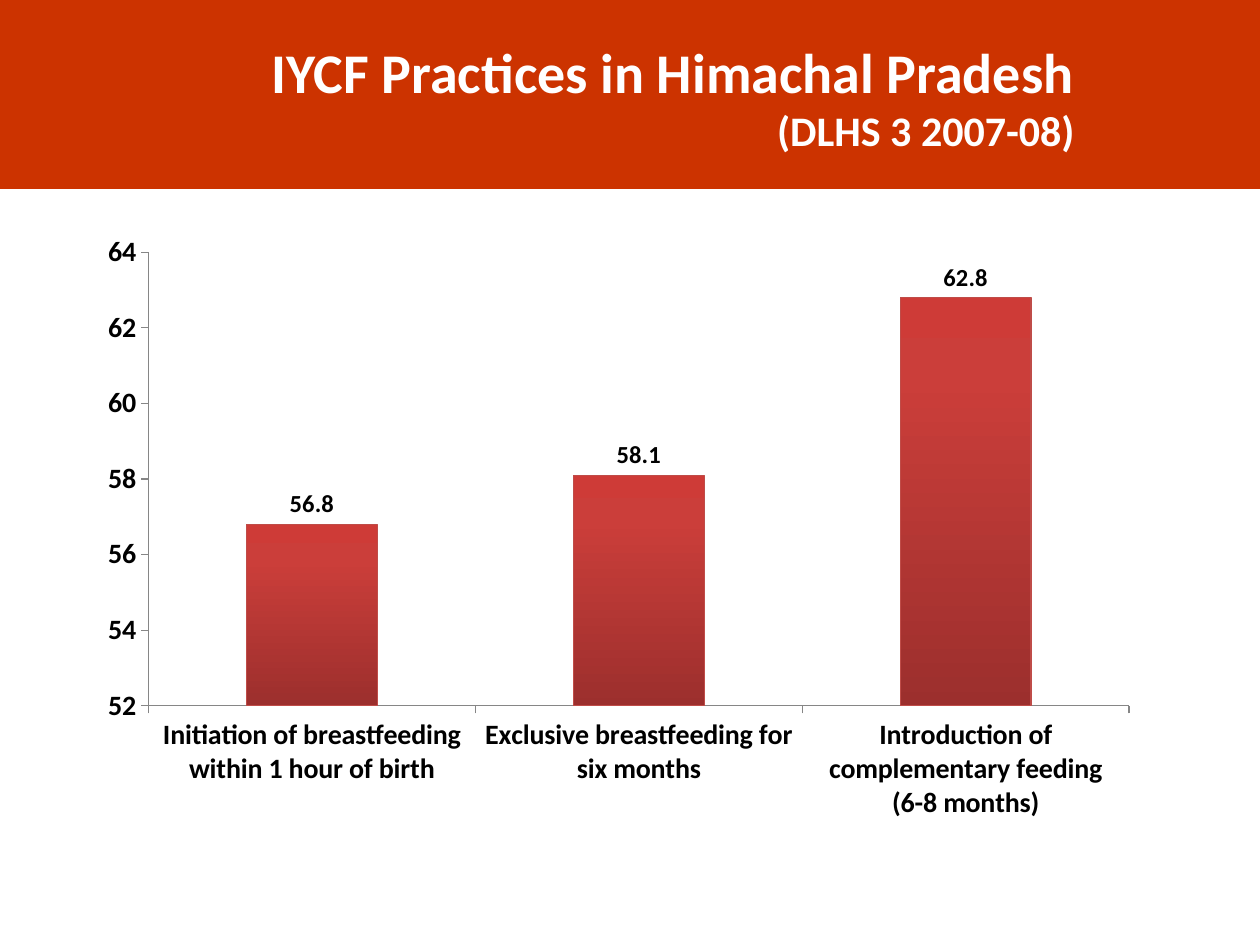
from copy import deepcopy
from dataclasses import dataclass

from pptx import Presentation
from pptx.chart.data import CategoryChartData
from pptx.dml.color import RGBColor as RGB
from pptx.enum.chart import XL_CHART_TYPE as ChartType
from pptx.enum.chart import XL_LABEL_POSITION as LabelPosition
from pptx.enum.chart import XL_TICK_MARK as TickMark
from pptx.enum.shapes import MSO_SHAPE as Shape
from pptx.enum.text import PP_ALIGN as Align
from pptx.util import Inches, Pt

TITLE = "IYCF Practices in Himachal Pradesh"
SOURCE = "(DLHS 3 2007-08)"
PRACTICES = [
    ("Initiation of breastfeeding within 1 hour of birth", 56.8),
    ("Exclusive breastfeeding for six months", 58.1),
    ("Introduction of complementary feeding (6-8 months)", 62.8),
]


@dataclass(frozen=True)
class Theme:
    font: str = "Calibri"
    banner: str = "CC3300"
    title: str = "FFFFFF"
    text: str = "000000"
    axis: str = "868686"
    bar_line: str = "BF4C48"
    bar_gradient: tuple = ((0, "9C2F2D"), (0.8, "CB3E3A"), (1, "CE3B37"))
    title_size: int = 32
    source_size: int = 24
    axis_size: int = 16
    label_size: int = 14


THEME = Theme()


def style_font(font, size, color):
    font.name = THEME.font
    font.size = Pt(size)
    font.bold = True
    font.color.rgb = RGB.from_string(color)


def add_banner(page):
    banner = page.shapes.add_shape(Shape.RECTANGLE, 0, 0, Inches(10), Inches(1.5))
    banner.shadow.inherit = False
    banner.fill.solid()
    banner.fill.fore_color.rgb = RGB.from_string(THEME.banner)
    banner.line.fill.background()


def add_title(page):
    box = page.shapes.add_textbox(Inches(0.69), Inches(0.25), Inches(8.06), Inches(1.35))
    frame = box.text_frame
    frame.word_wrap = True
    frame.margin_right = Inches(0.22)
    frame.text = f"{TITLE}\n{SOURCE}"
    for para, size in zip(frame.paragraphs, (THEME.title_size, THEME.source_size)):
        para.alignment = Align.RIGHT
        style_font(para.font, size, THEME.title)


def fill_bars(series):
    """Shade the bars from dark at the foot to light at the top."""
    fill = series.format.fill
    fill.gradient()
    fill.gradient_angle = 90
    stop_list = series._element.xpath(".//a:gsLst")[0]
    stop_list.append(deepcopy(stop_list[-1]))
    for stop, (position, color) in zip(fill.gradient_stops, THEME.bar_gradient):
        stop.position = position
        stop.color.rgb = RGB.from_string(color)
    series.format.line.color.rgb = RGB.from_string(THEME.bar_line)
    series.format.line.width = Pt(0.75)


def add_practice_chart(page):
    data = CategoryChartData()
    data.categories = [name for name, _ in PRACTICES]
    data.add_series("Series 1", [value for _, value in PRACTICES])
    chart = page.shapes.add_chart(
        ChartType.COLUMN_CLUSTERED,
        Inches(0.69), Inches(1.77), Inches(8.44), Inches(4.84), data,
    ).chart
    chart.has_legend = False
    chart.has_title = False
    chart.font.name = THEME.font
    chart.font.size = Pt(10)

    for axis in (chart.category_axis, chart.value_axis):
        axis.has_major_gridlines = False
        axis.major_tick_mark = TickMark.OUTSIDE
        axis.minor_tick_mark = TickMark.NONE
        axis.format.line.color.rgb = RGB.from_string(THEME.axis)
        style_font(axis.tick_labels.font, THEME.axis_size, THEME.text)
    chart.value_axis.minimum_scale = 52
    chart.value_axis.maximum_scale = 64
    chart.value_axis.major_unit = 2

    plot = chart.plots[0]
    plot.gap_width = 150
    plot.vary_by_categories = False
    series = plot.series[0]
    fill_bars(series)
    labels = series.data_labels
    labels.show_value = True
    labels.position = LabelPosition.OUTSIDE_END
    style_font(labels.font, THEME.label_size, THEME.text)


def main():
    deck = Presentation()
    deck.slide_width, deck.slide_height = Inches(10), Inches(7.5)
    page = deck.slides.add_slide(deck.slide_layouts[6])
    add_banner(page)
    add_practice_chart(page)
    add_title(page)
    deck.save("out.pptx")


if __name__ == "__main__":
    main()
